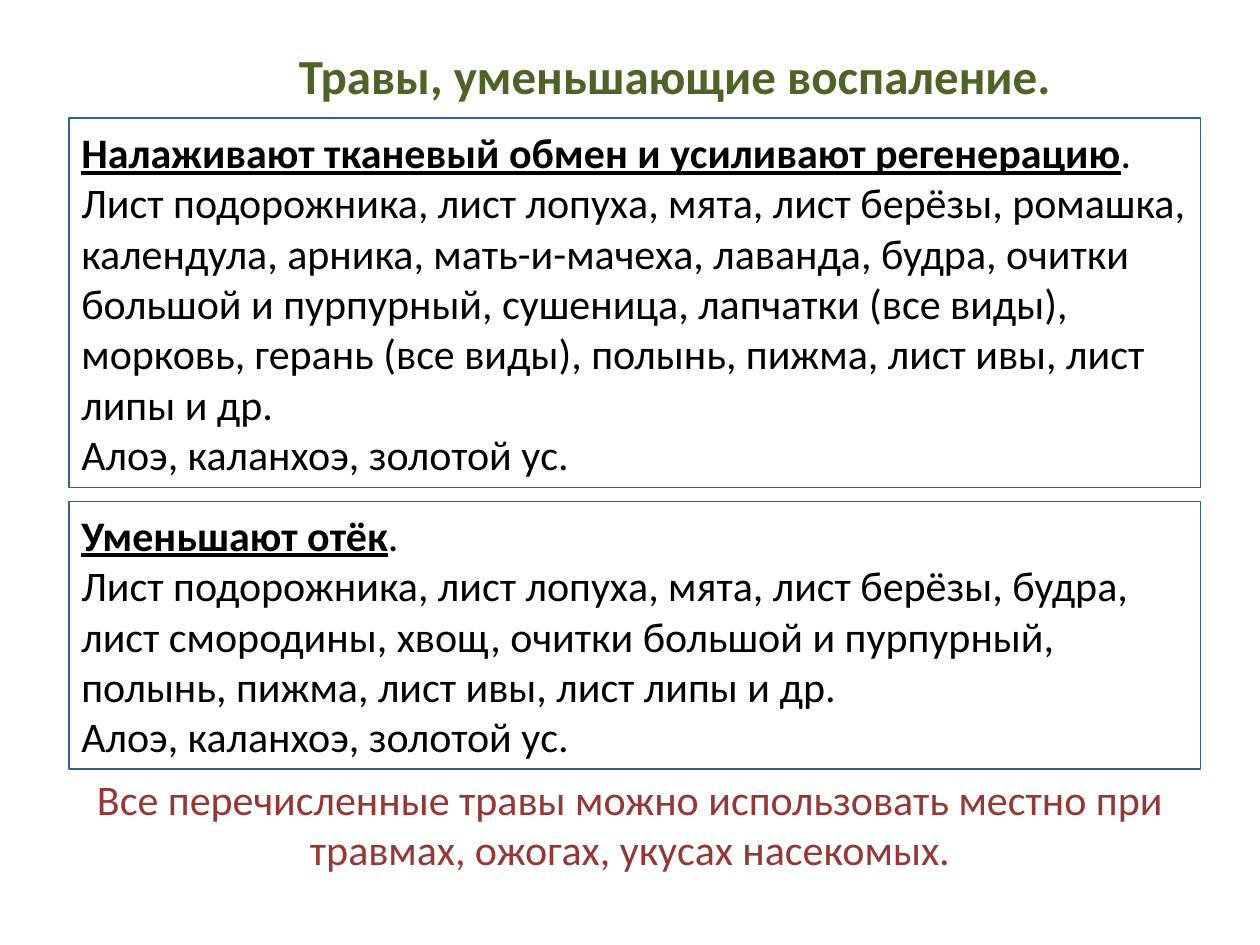
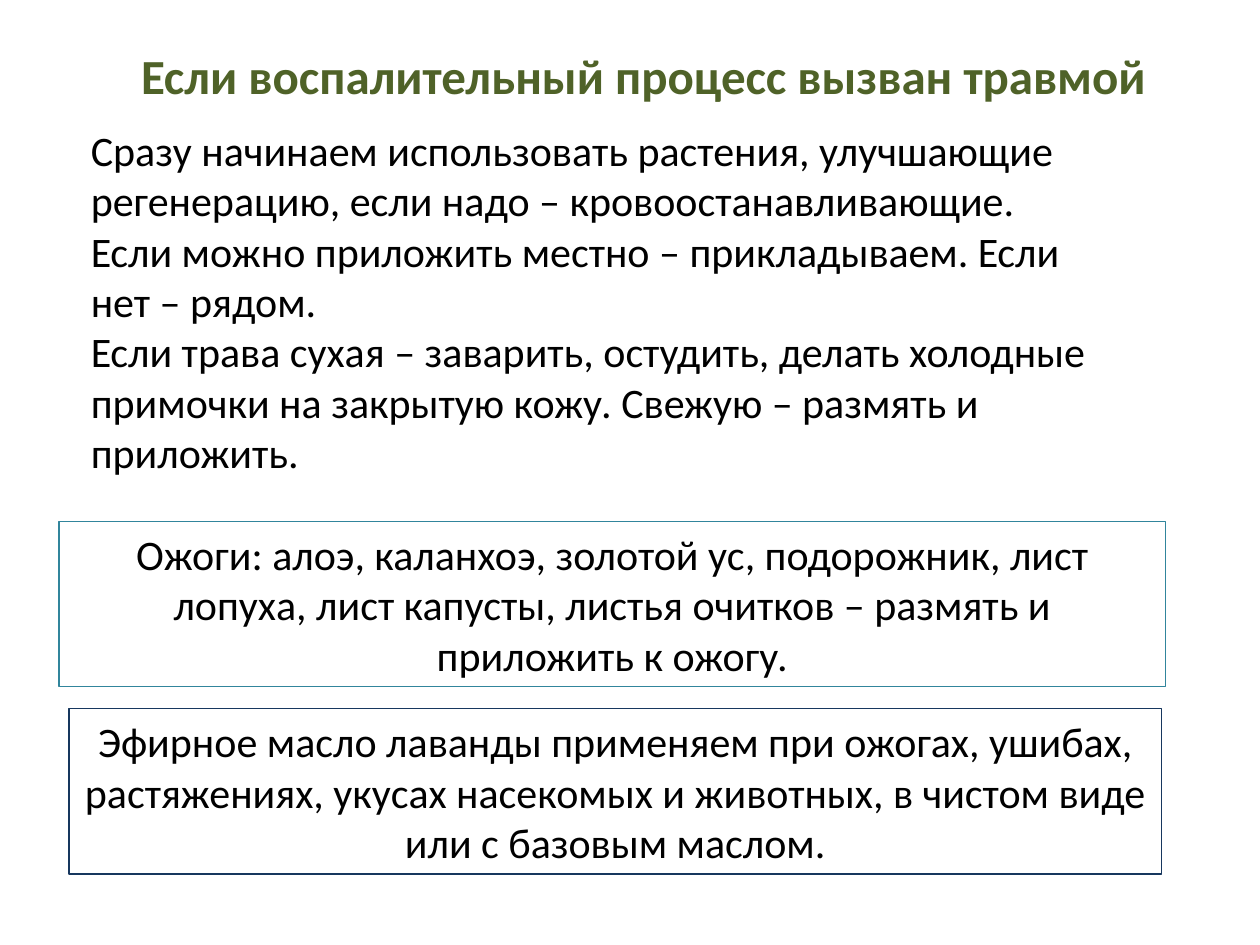
"""Build two slides about herbs that reduce inflammation."""
from pptx import Presentation
from pptx.dml.color import RGBColor
from pptx.enum.shapes import MSO_SHAPE
from pptx.enum.text import MSO_ANCHOR, MSO_AUTO_SIZE, PP_ALIGN
from pptx.util import Pt

LEFT, CENTER = PP_ALIGN.LEFT, PP_ALIGN.CENTER
TOP, MIDDLE = MSO_ANCHOR.TOP, MSO_ANCHOR.MIDDLE
FIT_SHAPE = MSO_AUTO_SIZE.SHAPE_TO_FIT_TEXT
RECTANGLE = MSO_SHAPE.RECTANGLE

FONT = "Calibri"
BLACK, GREEN, RED = "000000", "4F6228", "953735"
BLUE, TEAL, NAVY = "376092", "31859C", "17375E"
TITLE_TOP, TITLE_HEIGHT = 22.3, 41
BODY_TOP, BODY_HEIGHT = 67.5, 211


def write(shape, text, heading="", size=24, color=BLACK, bold=False, align=LEFT, anchor=TOP):
    """Fill a shape with one paragraph per line, after an optional underlined heading."""
    frame = shape.text_frame
    frame.word_wrap = True
    frame.auto_size = FIT_SHAPE
    frame.vertical_anchor = anchor
    frame.text = text
    for paragraph in frame.paragraphs:
        paragraph.alignment = align
        for run in paragraph.runs:
            run.font.name = FONT
            run.font.size = Pt(size)
            run.font.bold = bold
            run.font.color.rgb = RGBColor.from_string(color)
    if heading:
        run = frame.paragraphs[0].runs[0]
        run.text = heading
        run.font.bold = run.font.underline = True
        period = frame.paragraphs[0].add_run()
        period.text = "."
        period.font.name = FONT
        period.font.size = Pt(size)
        period.font.color.rgb = RGBColor.from_string(color)


def add_box(slide, left, top, width, height, line=None):
    """Add a text box, or an outlined rectangle when a line colour is given."""
    place = [Pt(value) for value in (left, top, width, height)]
    if line is None:
        return slide.shapes.add_textbox(*place)
    shape = slide.shapes.add_shape(RECTANGLE, *place)
    shape.shadow.inherit = False
    shape.fill.background()
    shape.line.color.rgb = RGBColor.from_string(line)
    shape.line.width = Pt(0.75)
    return shape


presentation = Presentation()
presentation.slide_width, presentation.slide_height = Pt(720), Pt(540)

titles = [
    ("Травы, уменьшающие воспаление.", 98.5, 574, CENTER),
    ("Если воспалительный процесс вызван травмой", 73.4, 595, LEFT),
]
slides = []
for title_text, left, width, align in titles:
    slide = presentation.slides.add_slide(presentation.slide_layouts[5])
    title = slide.shapes.title
    title.left, title.top = Pt(left), Pt(TITLE_TOP)
    title.width, title.height = Pt(width), Pt(TITLE_HEIGHT)
    write(title, title_text, size=28, color=GREEN, bold=True, align=align)
    slides.append(slide)
herbs_slide, injury_slide = slides

herb_groups = [
    (BODY_TOP, BODY_HEIGHT, "Налаживают тканевый обмен и усиливают регенерацию",
     "Лист подорожника, лист лопуха, мята, лист берёзы, ромашка, календула, арника, "
     "мать-и-мачеха, лаванда, будра, очитки большой и пурпурный, сушеница, лапчатки "
     "(все виды), морковь, герань (все виды), полынь, пижма, лист ивы, лист липы и др."),
    (286.5, 153, "Уменьшают отёк",
     "Лист подорожника, лист лопуха, мята, лист берёзы, будра, лист смородины, хвощ, "
     "очитки большой и пурпурный, полынь, пижма, лист ивы, лист липы и др."),
]
for top, height, heading, herbs in herb_groups:
    group = add_box(herbs_slide, 39.4, top, 646.6, height, BLUE)
    write(group, f"{heading}\n{herbs}\nАлоэ, каланхоэ, золотой ус.",
          heading=heading, anchor=MIDDLE)

local_use = add_box(herbs_slide, 22.3, 438.5, 675.4, 65.5)
write(local_use, "Все перечисленные травы можно использовать местно при травмах, "
      "ожогах, укусах насекомых.", color=RED, align=CENTER)

first_aid = add_box(injury_slide, 44.8, BODY_TOP, 602, BODY_HEIGHT)
write(first_aid, "Сразу начинаем использовать растения, улучшающие регенерацию, "
      "если надо – кровоостанавливающие.\n"
      "Если можно приложить местно – прикладываем. Если нет – рядом.\n"
      "Если трава сухая – заварить, остудить, делать холодные примочки на закрытую кожу. "
      "Свежую – размять и приложить.")

remedies = [
    (33.8, 298, 632.2, TEAL,
     "Ожоги: алоэ, каланхоэ, золотой ус, подорожник, лист лопуха, лист капусты, "
     "листья очитков – размять и приложить к ожогу."),
    (39.4, 405, 624.4, NAVY,
     "Эфирное масло лаванды применяем при ожогах, ушибах, растяжениях, укусах "
     "насекомых и животных, в чистом виде или с базовым маслом."),
]
for left, top, width, line, remedy in remedies:
    write(add_box(injury_slide, left, top, width, 94.5, line), remedy,
          align=CENTER, anchor=MIDDLE)

presentation.save("out.pptx")
